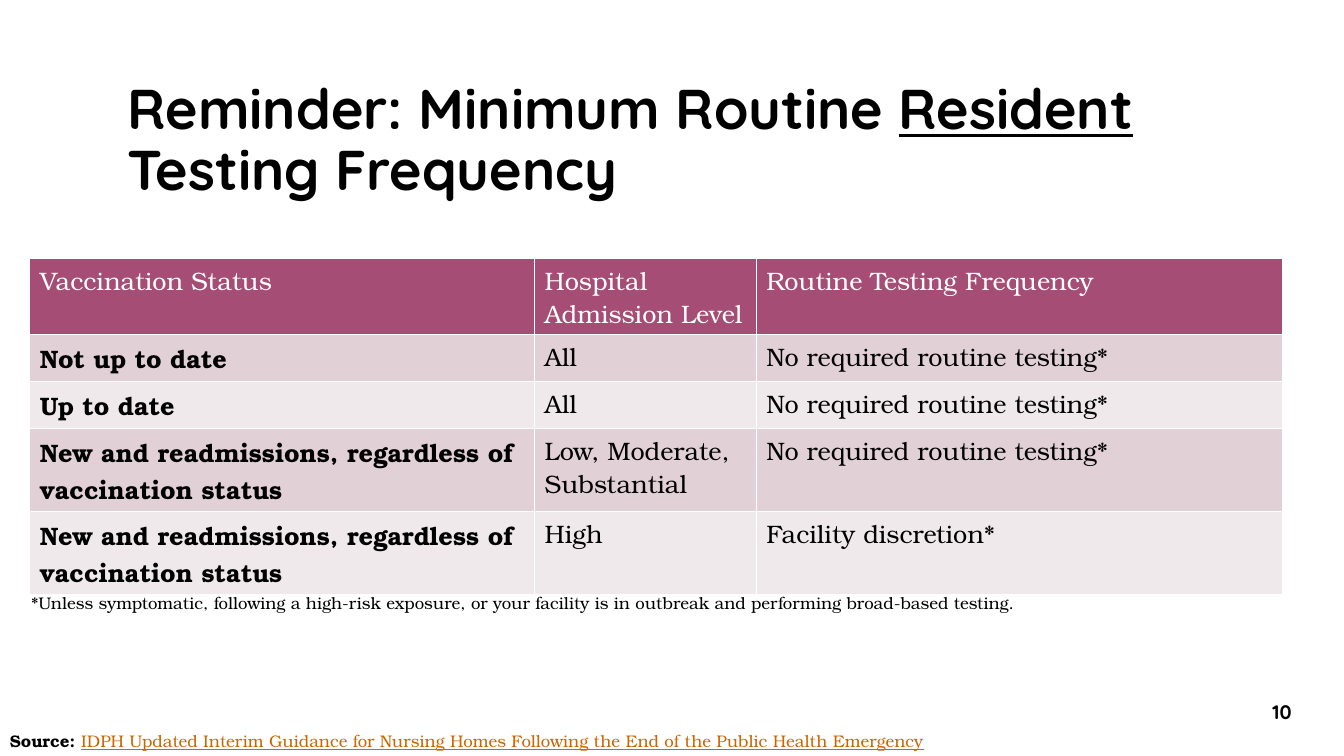
from dataclasses import dataclass

from lxml.etree import SubElement
from pptx import Presentation
from pptx.dml.color import RGBColor as Rgb
from pptx.enum.text import MSO_ANCHOR as Anchor, PP_ALIGN as Align
from pptx.oxml import parse_xml
from pptx.oxml.ns import nsdecls, qn
from pptx.util import Pt


@dataclass(frozen=True)
class Theme:
    heading_font: str = "Quicksand"
    body_font: str = "TeX Gyre Bonum"
    black: str = "000000"
    white: str = "FFFFFF"
    link: str = "CC6600"
    header_fill: str = "A54D74"
    band_fills: tuple = ("E1D0D6", "F0E9EB")
    title_size: int = 40
    table_size: int = 18
    number_size: int = 14
    note_size: int = 12


THEME = Theme()

COLUMN_WIDTHS = (360.7, 158.3, 376.3)
ROW_HEIGHTS = (54.3, 33.6, 33.6, 59.3, 59.3)
NO_TESTING = "No required routine testing*"
ADMISSIONS = "New and readmissions, regardless of vaccination status"
ROWS = (
    ("Vaccination Status", "Hospital Admission Level", "Routine Testing Frequency"),
    ("Not up to date", "All", NO_TESTING),
    ("Up to date", "All", NO_TESTING),
    (ADMISSIONS, "Low, Moderate, Substantial", NO_TESTING),
    (ADMISSIONS, "High", "Facility discretion*"),
)


def style_font(font, name, size, color=THEME.black, bold=False):
    font.name = name
    font.size = Pt(size)
    font.bold = bold
    font.color.rgb = Rgb.from_string(color)


def add_text(page, bounds, texts, name, size, bold=False, anchor=Anchor.TOP):
    """Add a one-paragraph box with one run per text; return the paragraph."""
    box = page.shapes.add_textbox(*(Pt(length) for length in bounds))
    frame = box.text_frame
    frame.word_wrap = True
    frame.vertical_anchor = anchor
    para = frame.paragraphs[0]
    for text in texts:
        para.add_run().text = text
    style_font(para.font, name, size, bold=bold)
    return para


def set_borders(cell, color, width):
    properties = cell._tc.get_or_add_tcPr()
    for index, side in enumerate(("lnL", "lnR", "lnT", "lnB")):
        line = parse_xml(f'<a:{side} {nsdecls("a")} w="{Pt(width)}"/>')
        fill = SubElement(line, qn("a:solidFill"))
        SubElement(fill, qn("a:srgbClr"), val=color)
        properties.insert(index, line)


def fill_cell(cell, text, fill, color, bold):
    cell.fill.solid()
    cell.fill.fore_color.rgb = Rgb.from_string(fill)
    set_borders(cell, THEME.white, 1)
    cell.text = text
    style_font(cell.text_frame.paragraphs[0].font, THEME.body_font,
               THEME.table_size, color, bold)


def add_testing_table(page):
    frame = page.shapes.add_table(
        len(ROWS), len(COLUMN_WIDTHS), Pt(21.2), Pt(184.6),
        Pt(sum(COLUMN_WIDTHS)), Pt(sum(ROW_HEIGHTS)))
    table = frame.table
    for column, width in zip(table.columns, COLUMN_WIDTHS):
        column.width = Pt(width)
    for row, height in zip(table.rows, ROW_HEIGHTS):
        row.height = Pt(height)
    for r, texts in enumerate(ROWS):
        header = r == 0
        fill = THEME.header_fill if header else THEME.band_fills[(r - 1) % 2]
        color = THEME.white if header else THEME.black
        for c, text in enumerate(texts):
            fill_cell(table.cell(r, c), text, fill, color, not header and c == 0)


def main():
    deck = Presentation()
    deck.slide_width, deck.slide_height = Pt(960), Pt(540)
    page = deck.slides.add_slide(deck.slide_layouts[6])

    # Title with one underlined word
    title = add_text(
        page, (84, 38, 792, 127),
        ("Reminder: Minimum Routine ", "Resident", " Testing Frequency"),
        THEME.heading_font, THEME.title_size, bold=True, anchor=Anchor.MIDDLE)
    title.line_spacing = 0.9
    title.runs[1].font.underline = True

    # Testing table and its footnote
    add_testing_table(page)
    add_text(
        page, (15.1, 419.8, 872, 58),
        ("*Unless symptomatic, following a high-risk exposure, or your facility "
         "is in outbreak and performing broad-based testing.",),
        THEME.body_font, THEME.note_size)

    # Slide number
    number = add_text(page, (890.6, 494, 50.4, 28.8), ("10",), THEME.heading_font,
                      THEME.number_size, bold=True, anchor=Anchor.MIDDLE)
    number.alignment = Align.CENTER

    # Source line
    source = add_text(
        page, (0, 518.4, 887, 21.6),
        ("Source: ", "IDPH Updated Interim Guidance for Nursing Homes Following "
         "the End of the Public Health Emergency"),
        THEME.body_font, THEME.note_size)
    label, reference = source.runs
    label.font.bold = True
    reference.font.underline = True
    reference.font.color.rgb = Rgb.from_string(THEME.link)

    deck.save("out.pptx")


if __name__ == "__main__":
    main()
